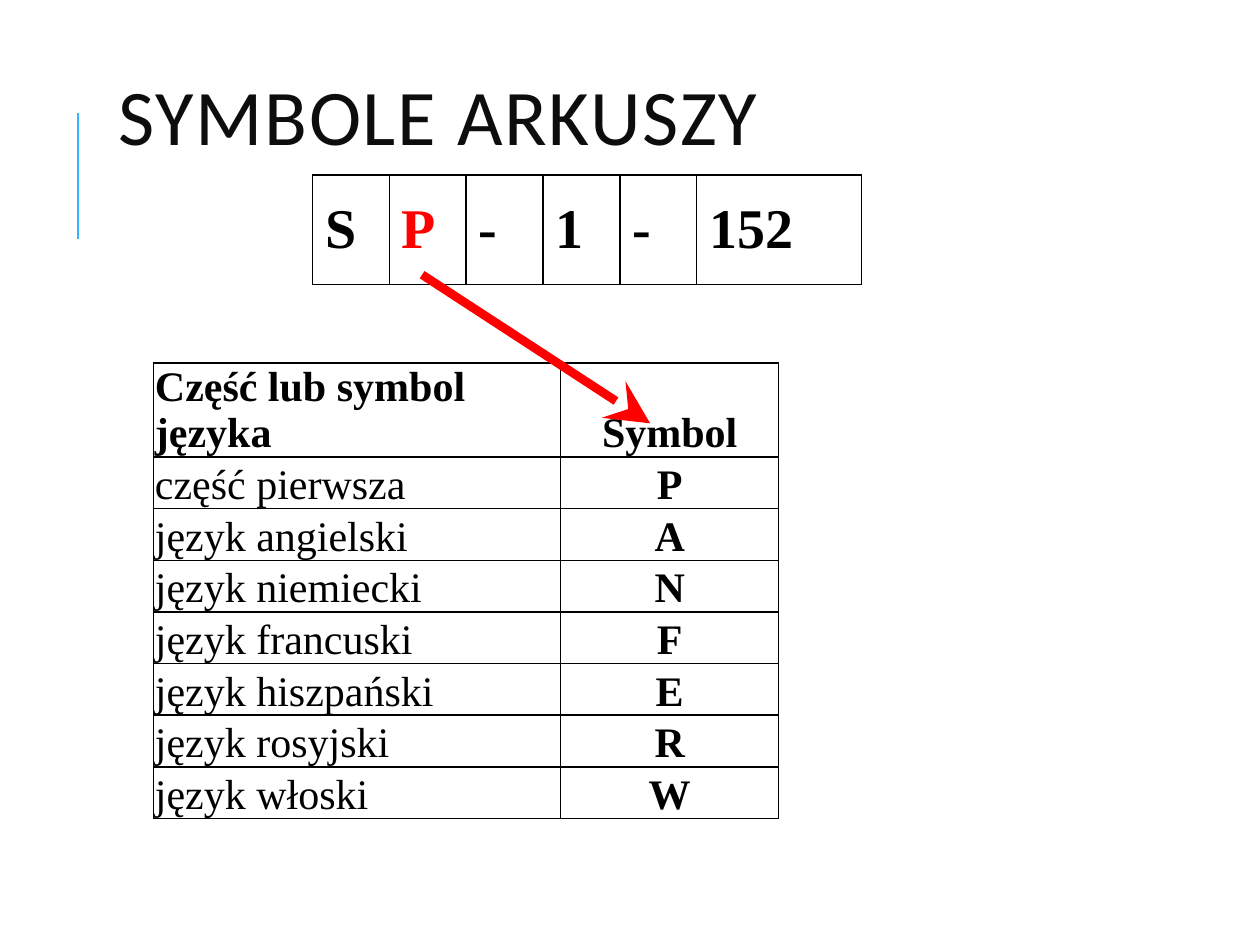
from lxml import etree
from pptx import Presentation
from pptx.dml.color import RGBColor
from pptx.enum.shapes import MSO_CONNECTOR
from pptx.enum.text import MSO_ANCHOR, MSO_AUTO_SIZE, PP_ALIGN
from pptx.oxml.ns import qn
from pptx.util import Inches, Pt

STRAIGHT = MSO_CONNECTOR.STRAIGHT
MIDDLE, BOTTOM = MSO_ANCHOR.MIDDLE, MSO_ANCHOR.BOTTOM
LEFT, CENTER = PP_ALIGN.LEFT, PP_ALIGN.CENTER
NO_AUTOFIT = MSO_AUTO_SIZE.NONE

BLACK = RGBColor(0x00, 0x00, 0x00)
TITLE_BLACK = RGBColor(0x0D, 0x0D, 0x0D)
WHITE = RGBColor(0xFF, 0xFF, 0xFF)
RED = RGBColor(0xFF, 0x00, 0x00)
BLUE = RGBColor(0x31, 0xB6, 0xFD)

TITLE_FONT = "Calibri"
TABLE_FONT = "Times New Roman"

SHEET_SYMBOL = ["S", "P", "-", "1", "-", "152"]
SYMBOL_WIDTHS = [0.61] * 5 + [1.31]
SYMBOL_MARGINS = (0.1, 0.05, 0.1, 0.05)

LANGUAGES = [
    ("Część lub symbol języka", "Symbol"),
    ("część pierwsza", "P"),
    ("język angielski", "A"),
    ("język niemiecki", "N"),
    ("język francuski", "F"),
    ("język hiszpański", "E"),
    ("język rosyjski", "R"),
    ("język włoski", "W"),
]
LANGUAGE_WIDTHS = [3.23, 1.73]
LANGUAGE_MARGINS = (0.01, 0.01, 0.01, 0)


def add_run(paragraph, text, font_name, size, color, bold=False):
    run = paragraph.add_run()
    run.text = text
    font = run.font
    font.name, font.size, font.bold = font_name, Pt(size), bold
    font.color.rgb = color
    return run


def add_title(slide, text):
    title = slide.shapes.title
    title.left, title.top = Inches(0.84), Inches(0.64)
    title.width, title.height = Inches(7.97), Inches(0.67)
    frame = title.text_frame
    frame.auto_size = NO_AUTOFIT
    frame.vertical_anchor = MIDDLE
    paragraph = frame.paragraphs[0]
    paragraph.alignment = LEFT
    paragraph.line_spacing = 0.8
    run = add_run(paragraph, text, TITLE_FONT, 45, TITLE_BLACK)
    run.font._element.set("spc", "100")


def add_line(slide, start, end, color, width):
    points = [Inches(value) for value in (*start, *end)]
    line = slide.shapes.add_connector(STRAIGHT, *points)
    line.line.color.rgb = color
    line.line.width = Pt(width)
    etree.SubElement(line._element.spPr, qn("a:effectLst"))
    return line


def add_arrow(slide, start, end, color, width):
    arrow = add_line(slide, start, end, color, width)
    etree.SubElement(arrow.line._get_or_add_ln(), qn("a:tailEnd"),
                     type="stealth", w="lg", len="lg")


def add_plain_table(slide, left, top, widths, row_height, row_count):
    """Add a table without banding, with the given column widths."""
    table = slide.shapes.add_table(
        row_count, len(widths), Inches(left), Inches(top),
        Inches(sum(widths)), Inches(row_height * row_count)).table
    table.first_row = table.horz_banding = False
    for column, width in zip(table.columns, widths):
        column.width = Inches(width)
    return table


def set_borders(cell):
    properties = cell._tc.get_or_add_tcPr()
    for index, side in enumerate(("lnL", "lnR", "lnT", "lnB")):
        border = etree.Element(qn(f"a:{side}"), w=str(Pt(1)))
        fill = etree.SubElement(border, qn("a:solidFill"))
        etree.SubElement(fill, qn("a:srgbClr"), val=str(BLACK))
        properties.insert(index, border)


def fill_cell(cell, text, size, bold, margins, anchor, color=BLACK, align=LEFT):
    (cell.margin_left, cell.margin_top,
     cell.margin_right, cell.margin_bottom) = map(Inches, margins)
    cell.vertical_anchor = anchor
    paragraph = cell.text_frame.paragraphs[0]
    paragraph.alignment = align
    add_run(paragraph, text, TABLE_FONT, size, color, bold)
    set_borders(cell)


def add_symbol_table(slide):
    table = add_plain_table(slide, 2.48, 1.39, SYMBOL_WIDTHS, 0.87, 1)
    for column, text in enumerate(SHEET_SYMBOL):
        cell = table.cell(0, column)
        cell.fill.solid()
        cell.fill.fore_color.rgb = WHITE
        fill_cell(cell, text, 32, True, SYMBOL_MARGINS, MIDDLE,
                  color=RED if text == "P" else BLACK)


def add_language_table(slide):
    table = add_plain_table(slide, 1.22, 2.88, LANGUAGE_WIDTHS, 0.41, len(LANGUAGES))
    for row, entry in enumerate(LANGUAGES):
        for column, text in enumerate(entry):
            cell = table.cell(row, column)
            cell.fill.background()
            is_symbol = column == 1
            fill_cell(cell, text, 24, row == 0 or is_symbol, LANGUAGE_MARGINS,
                      BOTTOM, align=CENTER if is_symbol else LEFT)


def main():
    presentation = Presentation()
    presentation.slide_width, presentation.slide_height = Inches(10), Inches(7.5)
    slide = presentation.slides.add_slide(presentation.slide_layouts[5])
    add_line(slide, (0.62, 1.9), (0.62, 0.9), BLUE, 1.5)
    add_title(slide, "SYMBOLE ARKUSZY")
    add_symbol_table(slide)
    add_language_table(slide)
    add_arrow(slide, (3.35, 2.18), (5.16, 3.36), RED, 5)
    presentation.save("out.pptx")


if __name__ == "__main__":
    main()
